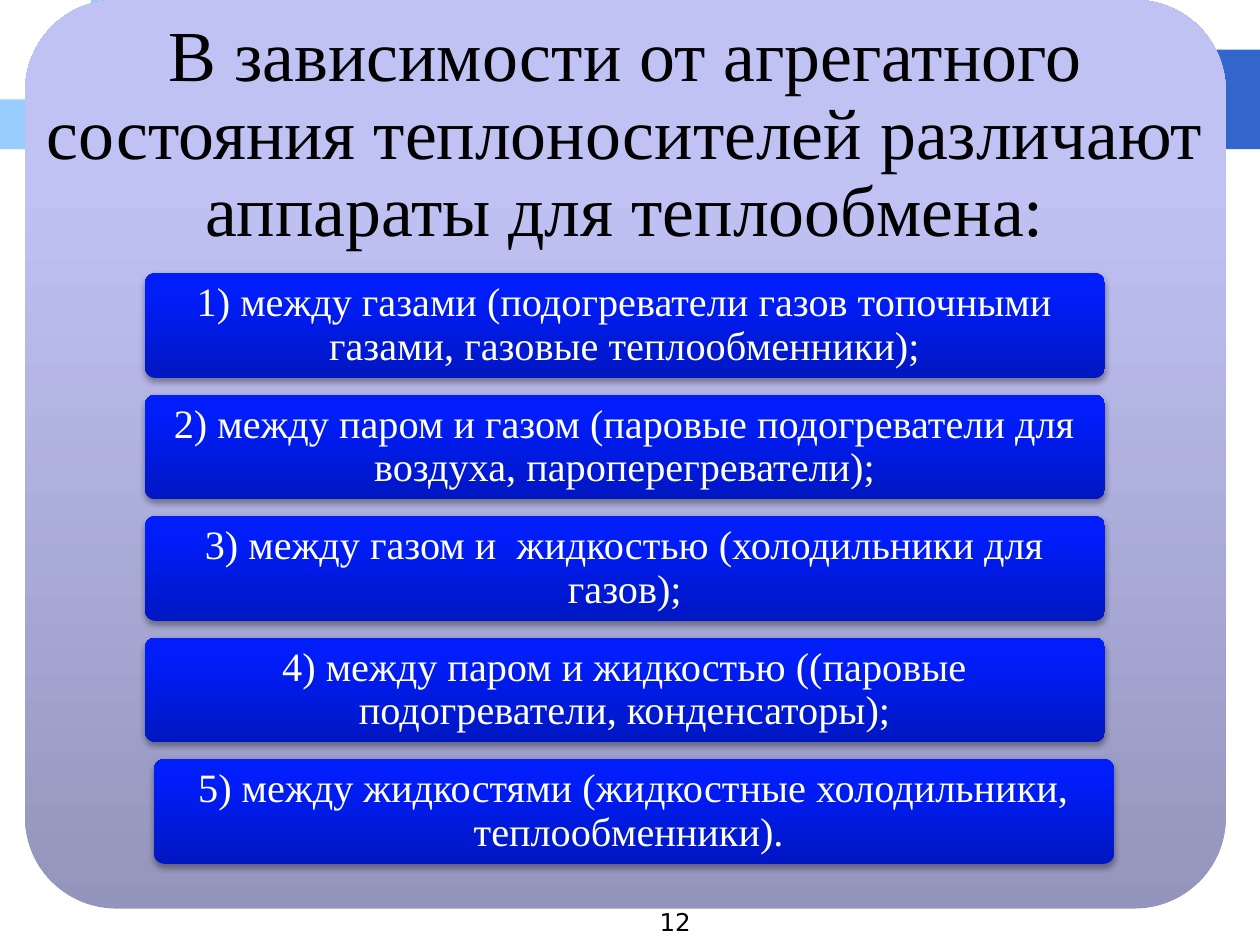
import lxml.etree
import pptx
import pptx.dml.color
import pptx.enum.shapes
import pptx.enum.text
import pptx.oxml
import pptx.oxml.ns
import pptx.util

Pt = pptx.util.Pt
RGBColor = pptx.dml.color.RGBColor
MSO_SHAPE = pptx.enum.shapes.MSO_SHAPE
PP_ALIGN = pptx.enum.text.PP_ALIGN
MSO_ANCHOR = pptx.enum.text.MSO_ANCHOR

BLACK = RGBColor(0x00, 0x00, 0x00)
WHITE = RGBColor(0xFF, 0xFF, 0xFF)
BAND_BLUE = RGBColor(0x33, 0x66, 0xCC)
LIGHT_BLUE = RGBColor(0x99, 0xCC, 0xFF)
MEDIUM_BLUE = RGBColor(0x66, 0x99, 0xFF)
PANEL_STOPS = [
    (0, RGBColor(0x94, 0x95, 0xBC)),
    (80, RGBColor(0xC0, 0xC2, 0xF4)),
    (100, RGBColor(0xC0, 0xC2, 0xF6)),
]
ITEM_STOPS = [
    (0, RGBColor(0x00, 0x17, 0xC1)),
    (80, RGBColor(0x00, 0x1D, 0xFA)),
    (100, RGBColor(0x00, 0x1E, 0xFB)),
]

TITLE = "В зависимости от агрегатного состояния теплоносителей различают аппараты для теплообмена:"
ITEMS = [
    "1) между газами (подогреватели газов топочными газами, газовые теплообменники);",
    "2) между паром и газом (паровые подогреватели для воздуха, пароперегреватели);",
    "3) между газом и  жидкостью (холодильники для газов);",
    "4) между паром и жидкостью ((паровые подогреватели, конденсаторы);",
    "5) между жидкостями (жидкостные холодильники, теплообменники). ",
]


def add_gradient_box(slide, left, top, width, height, stops):
    shape = slide.shapes.add_shape(
        MSO_SHAPE.ROUNDED_RECTANGLE, Pt(left), Pt(top), Pt(width), Pt(height)
    )
    shape.adjustments[0] = 0.1
    shape.shadow.inherit = False
    shape.line.fill.background()
    shape.fill.gradient()
    shape.fill.gradient_angle = 90
    stop_list = shape.element.spPr.find(".//" + pptx.oxml.ns.qn("a:gsLst"))
    for stop in list(stop_list):
        stop_list.remove(stop)
    for position, color in stops:
        stop = lxml.etree.SubElement(stop_list, pptx.oxml.ns.qn("a:gs"), pos=str(position * 1000))
        lxml.etree.SubElement(stop, pptx.oxml.ns.qn("a:srgbClr"), val=str(color))
    return shape


def set_centred_text(shape, text, size, color, inset):
    frame = shape.text_frame
    frame.text = text
    frame.word_wrap = True
    frame.auto_size = pptx.enum.text.MSO_AUTO_SIZE.NONE
    frame.vertical_anchor = MSO_ANCHOR.MIDDLE
    frame.margin_left = frame.margin_right = Pt(inset)
    frame.margin_top = frame.margin_bottom = Pt(inset)
    paragraph = frame.paragraphs[0]
    paragraph.alignment = PP_ALIGN.CENTER
    paragraph.line_spacing = 0.9
    paragraph.font.name = "Times New Roman"
    paragraph.font.size = Pt(size)
    paragraph.font.color.rgb = color


presentation = pptx.Presentation()
presentation.slide_width = Pt(720)
presentation.slide_height = Pt(540)
slide = presentation.slides.add_slide(presentation.slide_layouts[5])

tile_width, tile_height = 26, 28.4
decorations = [
    (2, 1, 668, 2 * tile_height, BAND_BLUE),
    (0, 2, tile_width, tile_height, LIGHT_BLUE),
    (1, 1, tile_width, tile_height, LIGHT_BLUE),
    (2, 0, tile_width, tile_height, LIGHT_BLUE),
    (2, 1, tile_width, tile_height, MEDIUM_BLUE),
    (1, 2, tile_width, tile_height, MEDIUM_BLUE),
]
for column, row, width, height, color in decorations:
    tile = slide.shapes.add_shape(
        MSO_SHAPE.RECTANGLE,
        Pt(column * tile_width), Pt(row * tile_height), Pt(width), Pt(height),
    )
    tile.shadow.inherit = False
    tile.fill.solid()
    tile.fill.fore_color.rgb = color
    tile.line.fill.background()

panel_left, panel_width = 14.4, 686
panel = add_gradient_box(slide, panel_left, 0, panel_width, 519.2, PANEL_STOPS)

title = slide.shapes.title
title.left, title.top = Pt(panel_left), Pt(0)
title.width, title.height = Pt(panel_width), Pt(155.5)
set_centred_text(title, TITLE, 41, BLACK, 12)
panel.element.addnext(title.element)

item_lefts = [82.8, 82.8, 82.8, 82.8, 88]
for index, (left, text) in enumerate(zip(item_lefts, ITEMS)):
    item = add_gradient_box(slide, left, 156.2 + 69.4 * index, 548.6, 59.8, ITEM_STOPS)
    set_centred_text(item, text, 23, WHITE, 3)
    effects = item.element.spPr.find(pptx.oxml.ns.qn("a:effectLst"))
    shadow = lxml.etree.SubElement(
        effects, pptx.oxml.ns.qn("a:outerShdw"),
        blurRad=str(Pt(3.1)), dist=str(Pt(1.8)), dir="5400000", rotWithShape="0",
    )
    shadow_color = lxml.etree.SubElement(shadow, pptx.oxml.ns.qn("a:srgbClr"), val=str(BLACK))
    lxml.etree.SubElement(shadow_color, pptx.oxml.ns.qn("a:alpha"), val="35000")

page_number = slide.shapes.add_textbox(Pt(234), Pt(514.8), Pt(167.8), Pt(25.2))
page_number.text_frame.word_wrap = True
page_number.text_frame.text = "12"
paragraph = page_number.text_frame.paragraphs[0]
paragraph.alignment = PP_ALIGN.RIGHT
paragraph.font.name = "DejaVu Sans"
paragraph.font.size = Pt(14)
paragraph.font.color.rgb = BLACK

presentation.save("out.pptx")
